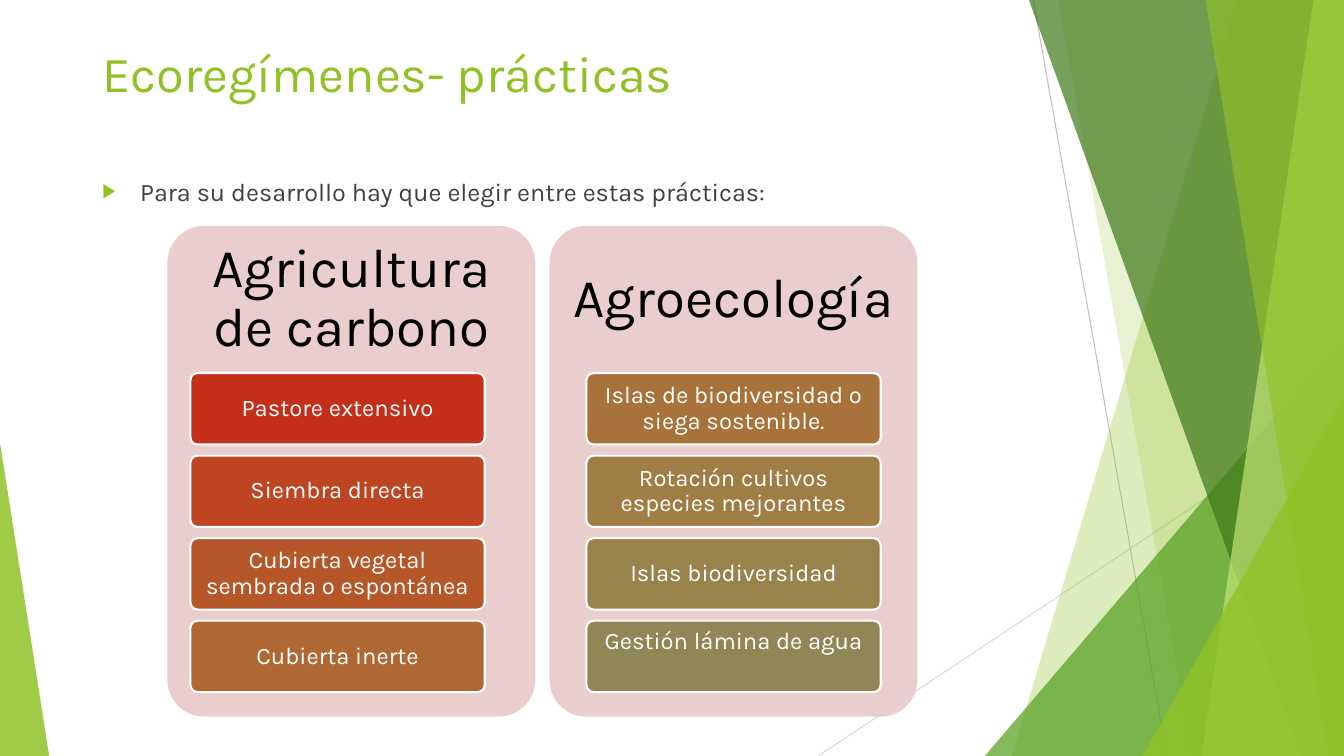
from lxml.etree import SubElement
from pptx import Presentation
from pptx.dml.color import RGBColor
from pptx.enum.shapes import MSO_CONNECTOR, MSO_SHAPE
from pptx.enum.text import MSO_ANCHOR as Anchor, MSO_AUTO_SIZE as AutoSize, PP_ALIGN as Align
from pptx.oxml.ns import qn
from pptx.util import Cm, Pt

FONT = "Karla"
SLIDE_W, SLIDE_H = 33.87, 19.05
COLORS = {
    "lime": "90C226", "green": "54A021", "forest": "3F7819", "pale": "C0E474",
    "grey": "BFBFBF", "light_grey": "D9D9D9", "body": "404040",
    "card": "EACDCD", "black": "000000", "white": "FFFFFF",
}
# Each card: heading, left inset of its bars, practices with their colours
CARDS = [
    ("Agricultura de carbono", 0.58, [
        ("Pastore extensivo", "C42F1A"),
        ("Siembra directa", "BD4522"),
        ("Cubierta vegetal sembrada o espontánea", "B6572A"),
        ("Cubierta inerte", "AF6733")]),
    ("Agroecología", 0.93, [
        ("Islas de biodiversidad o siega sostenible.", "A7733B"),
        ("Rotación cultivos especies mejorantes", "A07D44"),
        ("Islas biodiversidad", "99834C"),
        ("Gestión lámina de agua", "918655")]),
]


def rgb(name):
    return RGBColor.from_string(COLORS.get(name, name))


def paint(shape, color, opacity=100):
    shape.shadow.inherit = False
    shape.fill.solid()
    shape.fill.fore_color.rgb = rgb(color)
    shape.line.fill.background()
    if opacity < 100:
        srgb = shape.fill._xPr.find(qn("a:solidFill")).find(qn("a:srgbClr"))
        SubElement(srgb, qn("a:alpha"), val=str(opacity * 1000))


def write(frame, text, size, color, inset, anchor, align=Align.CENTER):
    frame.word_wrap = True
    frame.auto_size = AutoSize.NONE
    frame.vertical_anchor = anchor
    frame.margin_left = frame.margin_right = Cm(inset[0])
    frame.margin_top = frame.margin_bottom = Cm(inset[1])
    paragraph = frame.paragraphs[0]
    paragraph.text = text
    paragraph.alignment = align
    font = paragraph.font
    font.name, font.size, font.color.rgb = FONT, Pt(size), rgb(color)
    return paragraph


def draw_backdrop(shapes, x, y, w, h):
    right, bottom = x + w, y + h

    # Thin crossing lines
    for x1, y1, x2, color in [(26.04, 0, 29.41, "grey"), (w, 10.24, 20.62, "light_grey")]:
        ray = shapes.add_connector(MSO_CONNECTOR.STRAIGHT, Cm(x + x1), Cm(y + y1),
                                   Cm(x + x2), Cm(bottom))
        ray.line.color.rgb = rgb(color)
        ray.line.width = Pt(0.75)
        SubElement(ray._element.spPr, qn("a:effectLst"))

    def shard(top_x, bottom_x, color, opacity):
        outline = shapes.build_freeform(Cm(x + top_x), Cm(y))
        outline.add_line_segments([(Cm(right), Cm(y)), (Cm(right), Cm(bottom)),
                                   (Cm(x + bottom_x), Cm(bottom))])
        paint(outline.convert_to_shape(), color, opacity)

    def corner(left, top, width, apex, color, opacity):
        triangle = shapes.add_shape(MSO_SHAPE.ISOSCELES_TRIANGLE, Cm(x + left), Cm(y + top),
                                    Cm(width), Cm(h - top))
        triangle.adjustments[0] = apex
        paint(triangle, color, opacity)

    # Overlapping shards, from back to front
    shard(31.19, 25.5, "lime", 30)
    shard(26.67, 30.05, "lime", 20)
    corner(24.82, 8.46, w - 24.82, 1, "green", 72)
    shard(25.93, 32.79, "forest", 70)
    shard(33.1, 30.28, "pale", 70)
    shard(30.38, 33.48, "lime", 65)
    corner(28.8, 9.98, w - 28.8, 1, "lime", 80)
    corner(0, 11.15, 1.24, 0, "lime", 85)


def place(shape, x, y, w, h):
    shape.left, shape.top, shape.width, shape.height = Cm(x), Cm(y), Cm(w), Cm(h)


def fill_title(title, x, y, w, h):
    place(title, x, y, w, h)
    write(title.text_frame, "Ecoregímenes- prácticas", 36, "lime", (0.25, 0.13),
          Anchor.TOP, Align.LEFT)


def fill_intro(intro, x, y, w, h):
    place(intro, x, y, w, h)
    paragraph = write(intro.text_frame, "Para su desarrollo hay que elegir entre estas prácticas:",
                      18, "body", (0.25, 0.13), Anchor.TOP, Align.LEFT)
    paragraph.space_before = Pt(10)

    # Green arrow bullet, placed ahead of the font defaults
    props = paragraph._p.get_or_add_pPr()
    props.set("marL", str(Cm(0.95)))
    props.set("indent", str(-Cm(0.95)))
    bullet_color = SubElement(props, qn("a:buClr"))
    SubElement(bullet_color, qn("a:srgbClr"), val=COLORS["lime"])
    SubElement(props, qn("a:buSzPct"), val="80000")
    SubElement(props, qn("a:buChar"), char="▶")
    props.append(props.find(qn("a:defRPr")))


def draw_card(shapes, x, y, w, h, heading, bar_inset, practices):
    def rounded(left, top, width, height, color):
        box = shapes.add_shape(MSO_SHAPE.ROUNDED_RECTANGLE, Cm(left), Cm(top),
                               Cm(width), Cm(height))
        box.adjustments[0] = 0.1
        paint(box, color)
        return box

    # Panel and heading
    rounded(x, y, w, h, "card")
    heading_h = 0.3 * h
    heading_box = shapes.add_textbox(Cm(x), Cm(y), Cm(w), Cm(heading_h))
    write(heading_box.text_frame, heading, 39, "black", (0.41, 0.41),
          Anchor.MIDDLE).line_spacing = 0.9

    # Practice bars; the last one of the second card keeps its text at the top
    bar_h, pitch = 1.8, 2.08
    for row, (practice, color) in enumerate(practices):
        bar = rounded(x + bar_inset, y + heading_h + row * pitch, 0.8 * w, bar_h, color)
        bar.line.color.rgb = rgb("white")
        bar.line.width = Pt(1.5)
        anchor = Anchor.TOP if practice.startswith("Gestión") else Anchor.MIDDLE
        write(bar.text_frame, practice, 17, "white", (0.18, 0.15), anchor).line_spacing = 0.9


def build_slide(prs):
    slide = prs.slides.add_slide(prs.slide_layouts[1])
    draw_backdrop(slide.shapes, 0, 0, SLIDE_W, SLIDE_H)
    fill_title(slide.shapes.title, 2.33, 0.93, 29.21, 3.68)
    fill_intro(slide.placeholders[1], 2.33, 4.3, 29.21, 12.09)
    for column, card in enumerate(CARDS):
        draw_card(slide.shapes, 4.22 + column * 9.63, 5.69, 9.27, 12.37, *card)


def main():
    prs = Presentation()
    prs.slide_width, prs.slide_height = Cm(SLIDE_W), Cm(SLIDE_H)
    build_slide(prs)
    prs.save("out.pptx")


if __name__ == "__main__":
    main()
